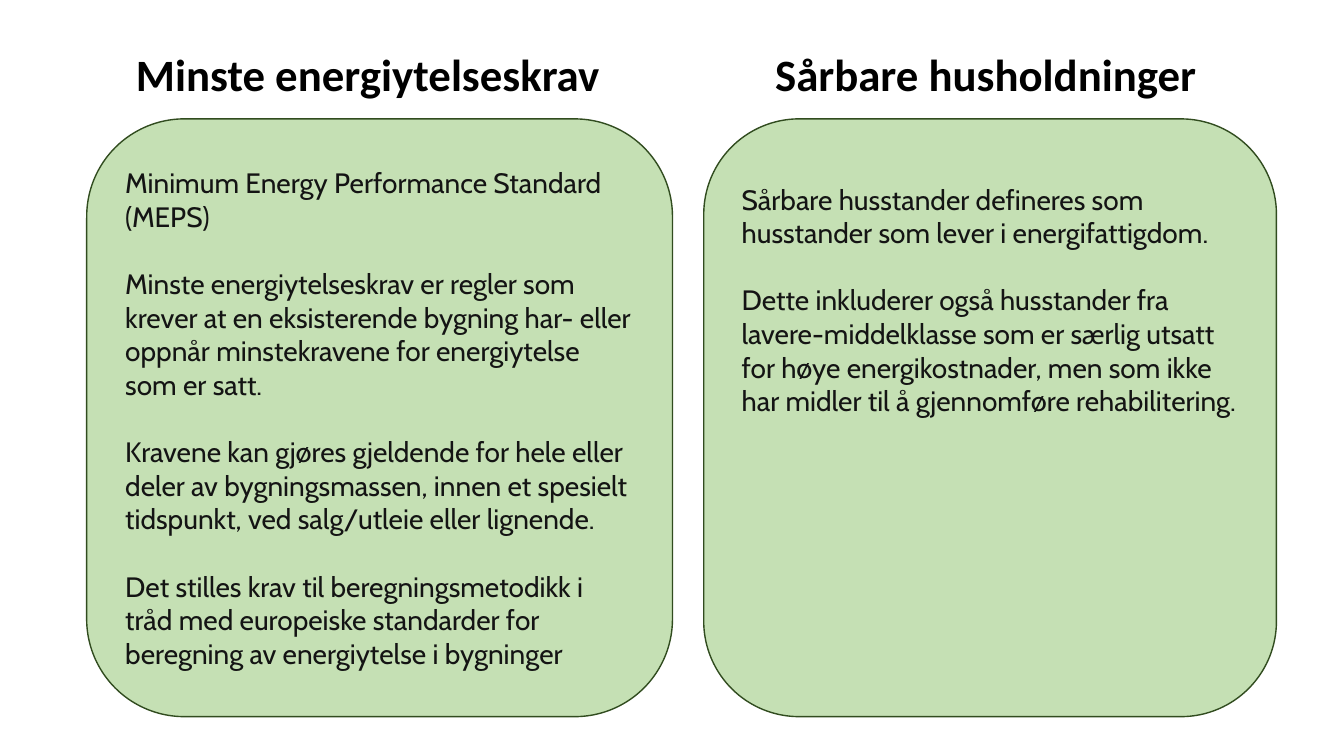
from pptx import Presentation
from pptx import util as u
from pptx.dml.color import RGBColor
from pptx.enum import shapes, text

COLORS = {"heading": "000000", "body": "141414", "card": "C5E0B4", "border": "314C1F"}
HEADING_FONT = {"name": "Calibri", "size": u.Pt(32), "bold": True}
BODY_FONT = {"name": "Cabin", "size": u.Pt(20), "bold": False}
HEADING_TOP, HEADING_HEIGHT = 0.41, 0.64
CARD_TOP, CARD_HEIGHT = 1.18, 5.93

TOPICS = [
    {
        "heading": "Minste energiytelseskrav",
        "heading_span": (1.25, 5.02),
        "card_span": (0.86, 5.81),
        "frame": {"vertical_anchor": text.MSO_ANCHOR.MIDDLE},
        "body": [
            "Minimum Energy Performance Standard (MEPS)",
            "Minste energiytelseskrav er regler som krever at en eksisterende bygning "
            "har- eller oppnår minstekravene for energiytelse som er satt.",
            "Kravene kan gjøres gjeldende for hele eller deler av bygningsmassen, "
            "innen et spesielt tidspunkt, ved salg/utleie eller lignende.",
            "Det stilles krav til beregningsmetodikk i tråd med europeiske standarder "
            "for beregning av energiytelse i bygninger",
        ],
    },
    {
        "heading": "Sårbare husholdninger",
        "heading_span": (7.59, 4.48),
        "card_span": (6.98, 5.68),
        "frame": {"vertical_anchor": text.MSO_ANCHOR.TOP, "margin_top": u.Inches(0.35)},
        "body": [
            "Sårbare husstander defineres som husstander som lever i energifattigdom.",
            "Dette inkluderer også husstander fra lavere-middelklasse som er særlig utsatt "
            "for høye energikostnader, men som ikke har midler til å gjennomføre rehabilitering.",
        ],
    },
]


def rgb(name):
    return RGBColor.from_string(COLORS[name])


def apply(target, values):
    for key, value in values.items():
        setattr(target, key, value)


def box(span, top, height):
    left, width = span
    return [u.Inches(length) for length in (left, top, width, height)]


def write(frame, paragraphs, font, color):
    frame.word_wrap = True
    for index, wording in enumerate(paragraphs):
        paragraph = frame.add_paragraph() if index else frame.paragraphs[0]
        paragraph.alignment = text.PP_ALIGN.LEFT
        if index:
            paragraph.space_before = u.Pt(24)
        run = paragraph.add_run()
        run.text = wording
        apply(run.font, font)
        run.font.color.rgb = rgb(color)


def add_heading(slide, topic):
    heading = slide.shapes.add_textbox(*box(topic["heading_span"], HEADING_TOP, HEADING_HEIGHT))
    write(heading.text_frame, [topic["heading"]], HEADING_FONT, "heading")


def add_card(slide, topic):
    card = slide.shapes.add_shape(
        shapes.MSO_SHAPE.ROUNDED_RECTANGLE, *box(topic["card_span"], CARD_TOP, CARD_HEIGHT)
    )
    card.shadow.inherit = False
    card.fill.solid()
    card.fill.fore_color.rgb = rgb("card")
    card.line.color.rgb = rgb("border")
    card.line.width = u.Pt(1)
    apply(card.text_frame, topic["frame"])
    write(card.text_frame, topic["body"], BODY_FONT, "body")


def main():
    deck = Presentation()
    apply(deck, {"slide_width": u.Inches(13.33), "slide_height": u.Inches(7.5)})
    slide = deck.slides.add_slide(deck.slide_layouts.get_by_name("Blank"))
    for topic in TOPICS:
        add_heading(slide, topic)
        add_card(slide, topic)
    deck.save("out.pptx")


if __name__ == "__main__":
    main()
